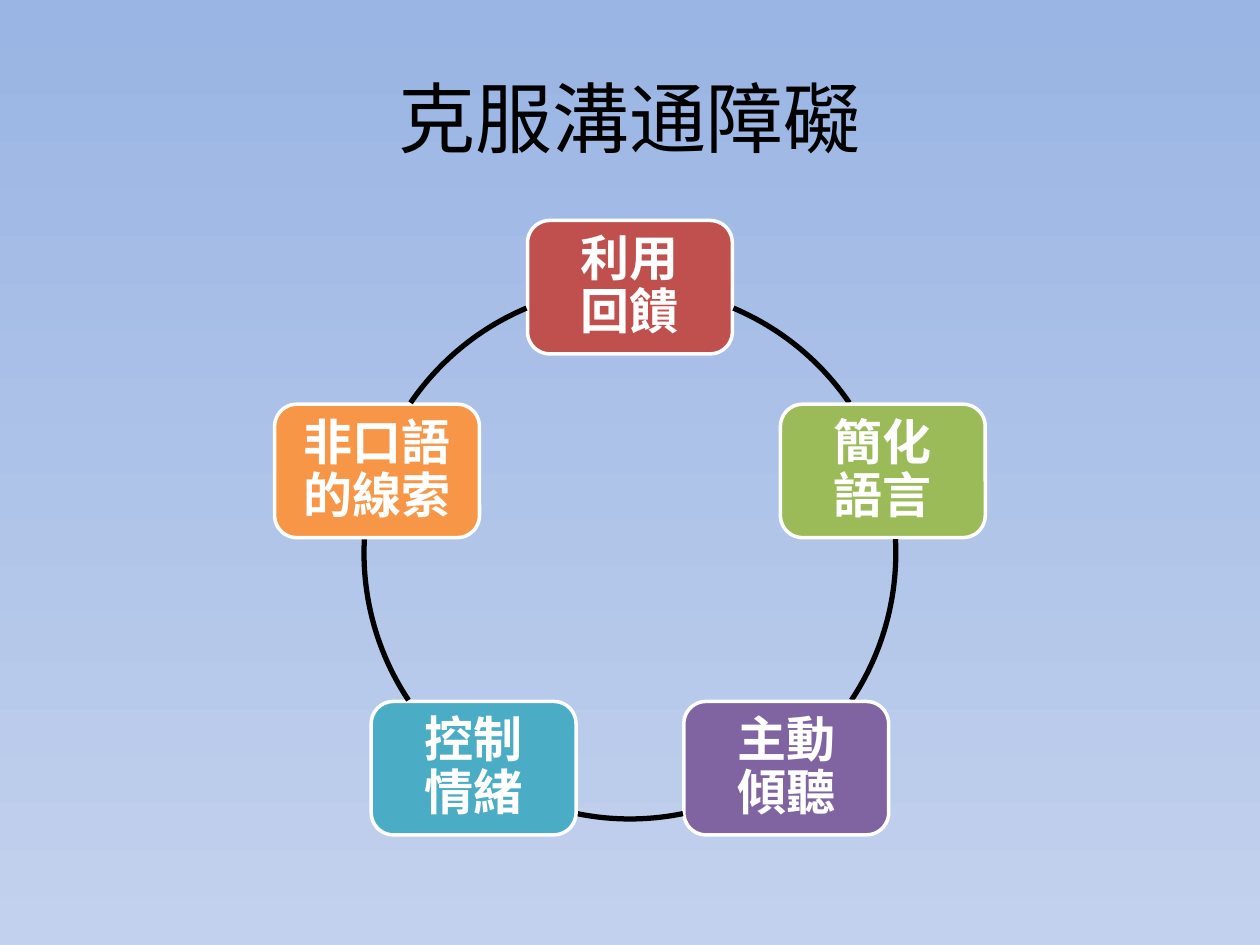
from dataclasses import dataclass
from math import cos, radians, sin

from lxml import etree
from pptx import Presentation
from pptx.dml.color import RGBColor
from pptx.enum.shapes import MSO_SHAPE
from pptx.enum.text import MSO_ANCHOR, PP_ALIGN
from pptx.oxml.ns import qn
from pptx.util import Cm, Pt

ROUNDED = MSO_SHAPE.ROUNDED_RECTANGLE
ARC = MSO_SHAPE.ARC
MIDDLE = MSO_ANCHOR.MIDDLE
CENTER = PP_ALIGN.CENTER

FONT = "Noto Sans CJK SC"
BLACK, WHITE = "000000", "FFFFFF"

# Ring geometry in centimetres
CENTER_X, CENTER_Y, RADIUS = 12.7, 11.15, 5.36
NODE_WIDTH, NODE_HEIGHT = 4.13, 2.69


@dataclass
class Node:
    text: str
    color: str


@dataclass
class Arc:
    """Degrees clockwise from the right-hand side of the ring."""
    start: float
    end: float


NODES = [
    Node("利用\v回饋", "C0504D"),
    Node("簡化\v語言", "9BBB59"),
    Node("主動\v傾聽", "8064A2"),
    Node("控制\v情緒", "4BACC6"),
    Node("非口語的線索", "F79646"),
]
ARCS = [
    Arc(292.9, 325.6),
    Arc(357, 393.6),
    Arc(78.5, 101.5),
    Arc(146.4, 183),
    Arc(214.4, 247.1),
]


def rgb(color: str) -> RGBColor:
    return RGBColor.from_string(color)


def write(frame, text: str, size: float, color: str, bold: bool = False) -> None:
    frame.word_wrap = True
    frame.vertical_anchor = MIDDLE
    paragraph = frame.paragraphs[0]
    paragraph.text = text
    paragraph.alignment = CENTER
    font = paragraph.font
    font.name, font.size, font.bold = FONT, Pt(size), bold
    font.color.rgb = rgb(color)
    # East Asian characters need their own typeface entry
    defaults = paragraph._p.pPr.find(qn("a:defRPr"))
    etree.SubElement(defaults, qn("a:ea"), typeface=FONT)


def draw_arc(slide, arc: Arc) -> None:
    shape = slide.shapes.add_shape(
        ARC, Cm(CENTER_X - RADIUS), Cm(CENTER_Y - RADIUS), Cm(2 * RADIUS), Cm(2 * RADIUS))
    shape.shadow.inherit = False
    # Adjustments are stored as 60000ths of a degree, scaled by 100000
    for index, angle in enumerate((arc.start, arc.end)):
        shape.adjustments[index] = angle % 360 * 0.6
    shape.fill.background()
    shape.line.color.rgb = rgb(BLACK)
    shape.line.width = Pt(3)


def draw_node(slide, node: Node, angle: float) -> None:
    left = CENTER_X + RADIUS * cos(radians(angle)) - NODE_WIDTH / 2
    top = CENTER_Y + RADIUS * sin(radians(angle)) - NODE_HEIGHT / 2
    shape = slide.shapes.add_shape(
        ROUNDED, Cm(left), Cm(top), Cm(NODE_WIDTH), Cm(NODE_HEIGHT))
    shape.shadow.inherit = False
    shape.fill.solid()
    shape.fill.fore_color.rgb = rgb(node.color)
    shape.line.color.rgb = rgb(WHITE)
    shape.line.width = Pt(2)
    frame = shape.text_frame
    frame.margin_left = frame.margin_right = Cm(0.3)
    frame.margin_top = frame.margin_bottom = Cm(0.3)
    write(frame, node.text, 28, WHITE, bold=True)
    frame.paragraphs[0].line_spacing = 0.9


def main() -> None:
    presentation = Presentation()
    presentation.slide_width, presentation.slide_height = Cm(25.4), Cm(19.05)
    slide = presentation.slides.add_slide(presentation.slide_layouts[6])

    # Background, darker at the top
    fill = slide.background.fill
    fill.gradient()
    fill.gradient_angle = 270
    for stop, color in zip(fill.gradient_stops, ("9AB5E4", "C2D1ED")):
        stop.color.rgb = rgb(color)

    # Title
    title = slide.shapes.add_textbox(Cm(1.27), Cm(0.76), Cm(22.86), Cm(3.18))
    write(title.text_frame, "克服溝通障礙", 44, BLACK)

    # Cycle, clockwise from the top
    step = 360 / len(NODES)
    for index, (node, arc) in enumerate(zip(NODES, ARCS)):
        draw_node(slide, node, index * step - 90)
        draw_arc(slide, arc)

    presentation.save("out.pptx")


if __name__ == "__main__":
    main()
